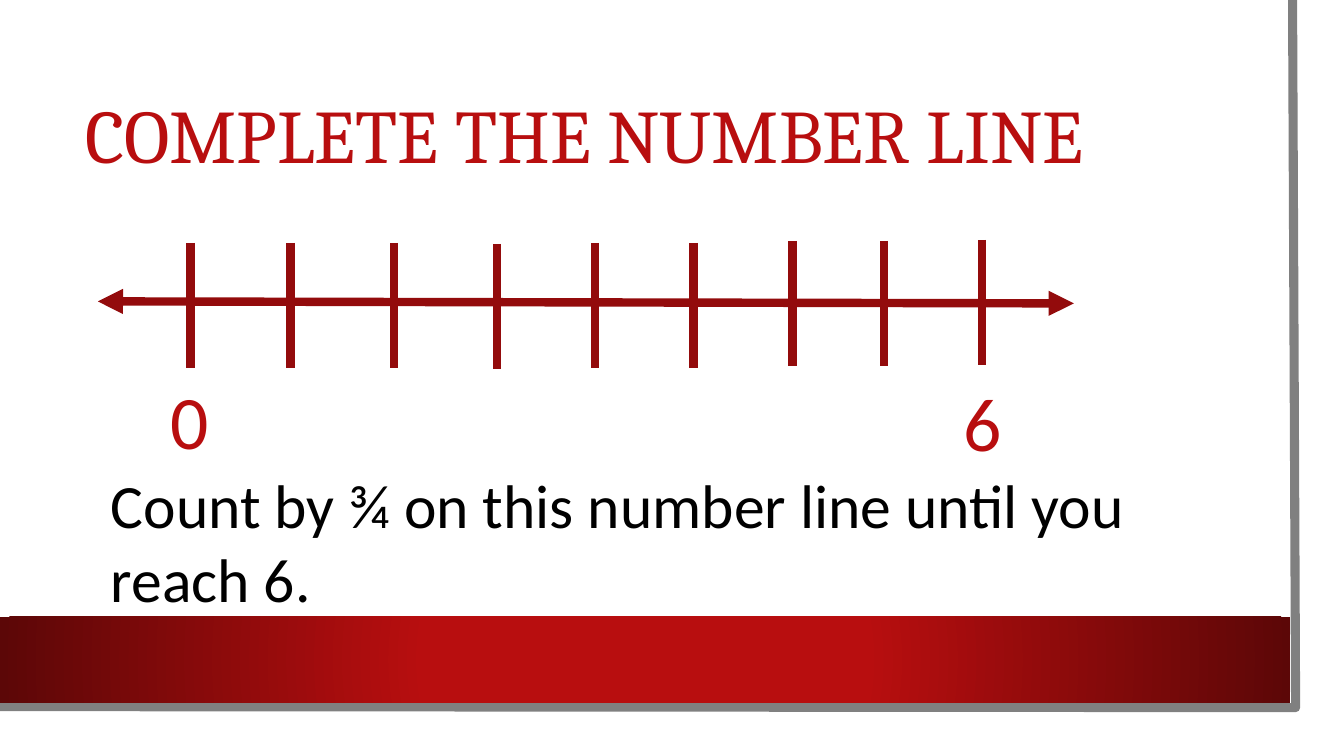
from lxml import etree
from pptx import Presentation, util as u
from pptx.dml.color import RGBColor
from pptx.enum import shapes, text
from pptx.oxml import parse_xml
from pptx.oxml.ns import nsdecls, qn

PX = 9144
THEME = {
    "red": "B80E0F", "dark": "5C0707", "line": "930B0C", "frame": "808080",
    "ink": "000000", "heading": "Cambria", "body": "Calibri",
    "large": 54, "medium": 44, "stroke": 6, "border": 6.5,
}

prs = Presentation()
prs.slide_width, prs.slide_height = 1333 * PX, 750 * PX
s = prs.slides.add_slide(prs.slide_layouts[6])


def add_line(x1, y1, x2, y2):
    sp = s.shapes.add_connector(
        shapes.MSO_CONNECTOR.STRAIGHT, *(v * PX for v in (x1, y1, x2, y2)))
    sp.line.color.rgb = RGBColor.from_string(THEME["line"])
    sp.line.width = u.Pt(THEME["stroke"])
    etree.SubElement(sp._element.spPr, qn("a:effectLst"))
    return sp


def add_text(box, words, font, size, color, frame, para):
    tf = s.shapes.add_textbox(*(v * PX for v in box)).text_frame
    for name, value in frame.items():
        setattr(tf, name, value)
    p = tf.paragraphs[0]
    for name, value in para.items():
        setattr(p, name, value)
    r = p.add_run()
    r.text = words
    for name, value in {"name": THEME[font], "size": u.Pt(THEME[size])}.items():
        setattr(r.font, name, value)
    r.font.color.rgb = RGBColor.from_string(THEME[color])


builder = s.shapes.build_freeform(1282, 0, scale=PX)
builder.add_line_segments([(1285, 702), (-3, 701)], close=False)
border = builder.convert_to_shape()
border.shadow.inherit = False
border.fill.background()
border.line.color.rgb = RGBColor.from_string(THEME["frame"])
border.line.width = u.Pt(THEME["border"])

band = s.shapes.add_shape(
    shapes.MSO_SHAPE.RECTANGLE, 0, 612 * PX, 1280 * PX, 85 * PX)
band.shadow.inherit = False
band.line.fill.background()
band.fill.background()
no_fill = band._element.spPr.find(qn("a:noFill"))
band._element.spPr.replace(no_fill, parse_xml(
    f'<a:gradFill {nsdecls("a")} rotWithShape="1"><a:gsLst>'
    f'<a:gs pos="34000"><a:srgbClr val="{THEME["red"]}"/></a:gs>'
    f'<a:gs pos="100000"><a:srgbClr val="{THEME["dark"]}"/></a:gs>'
    '</a:gsLst><a:path path="circle">'
    '<a:fillToRect l="50000" t="50000" r="50000" b="50000"/>'
    '</a:path></a:gradFill>'))

add_text((75, 75, 1137, 126), "COMPLETE THE NUMBER LINE", "heading", "large", "red",
         {"word_wrap": True, "vertical_anchor": text.MSO_ANCHOR.MIDDLE},
         {"line_spacing": 0.9})

axis = add_line(97, 299, 1065, 301)
for end in ("a:headEnd", "a:tailEnd"):
    etree.SubElement(axis.line._get_or_add_ln(), qn(end), type="triangle")

TICK_HEIGHT = 124
ticks = [(189, 241), (288, 241), (391, 241), (493, 242), (590, 241),
         (688, 241), (786, 239), (877, 239), (974, 238)]
for x, top in ticks:
    add_line(x, top, x, top + TICK_HEIGHT)

for x, top, number in [(159, 366, "0"), (945, 368, "6")]:
    add_text((x, top, 59, 101), number, "body", "large", "red",
             {"word_wrap": False}, {"alignment": text.PP_ALIGN.CENTER})

add_text((100, 458, 1050, 158), "Count by ¾ on this number line until you reach 6.",
         "body", "medium", "ink", {"word_wrap": True}, {})

prs.save("out.pptx")
